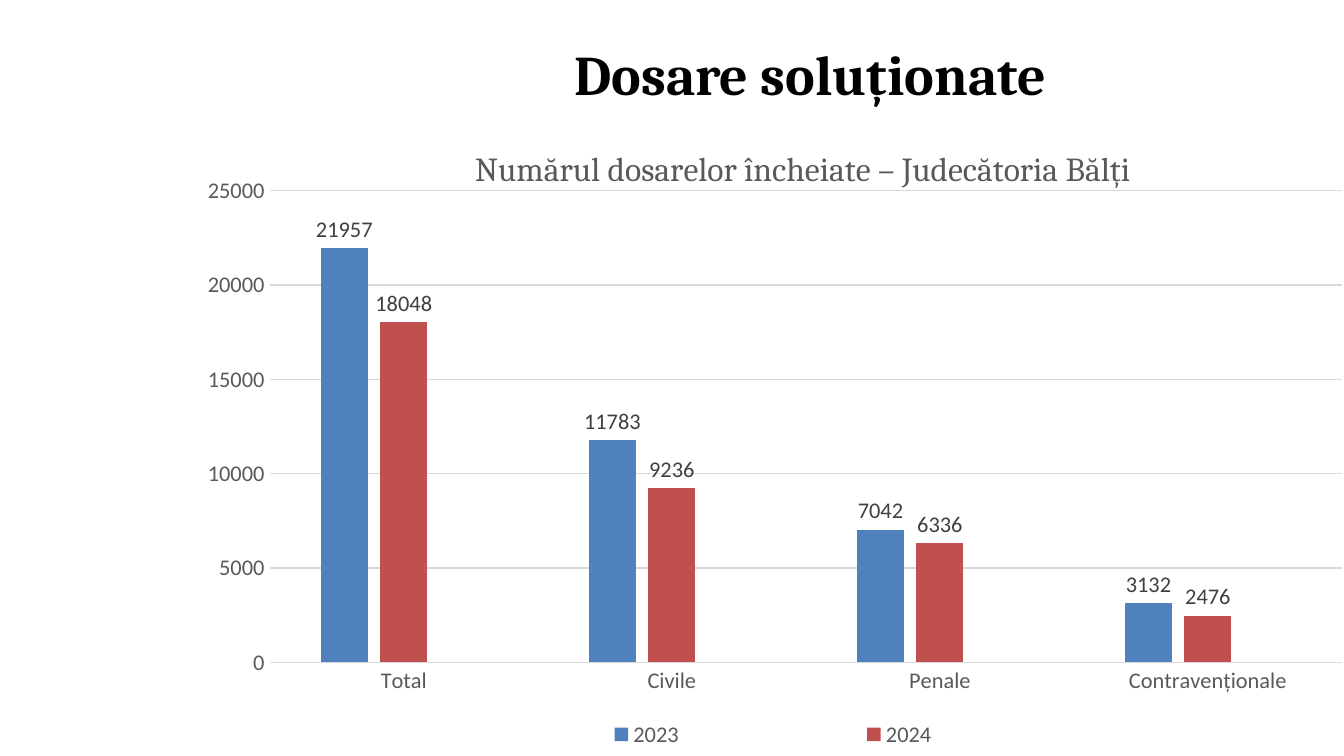
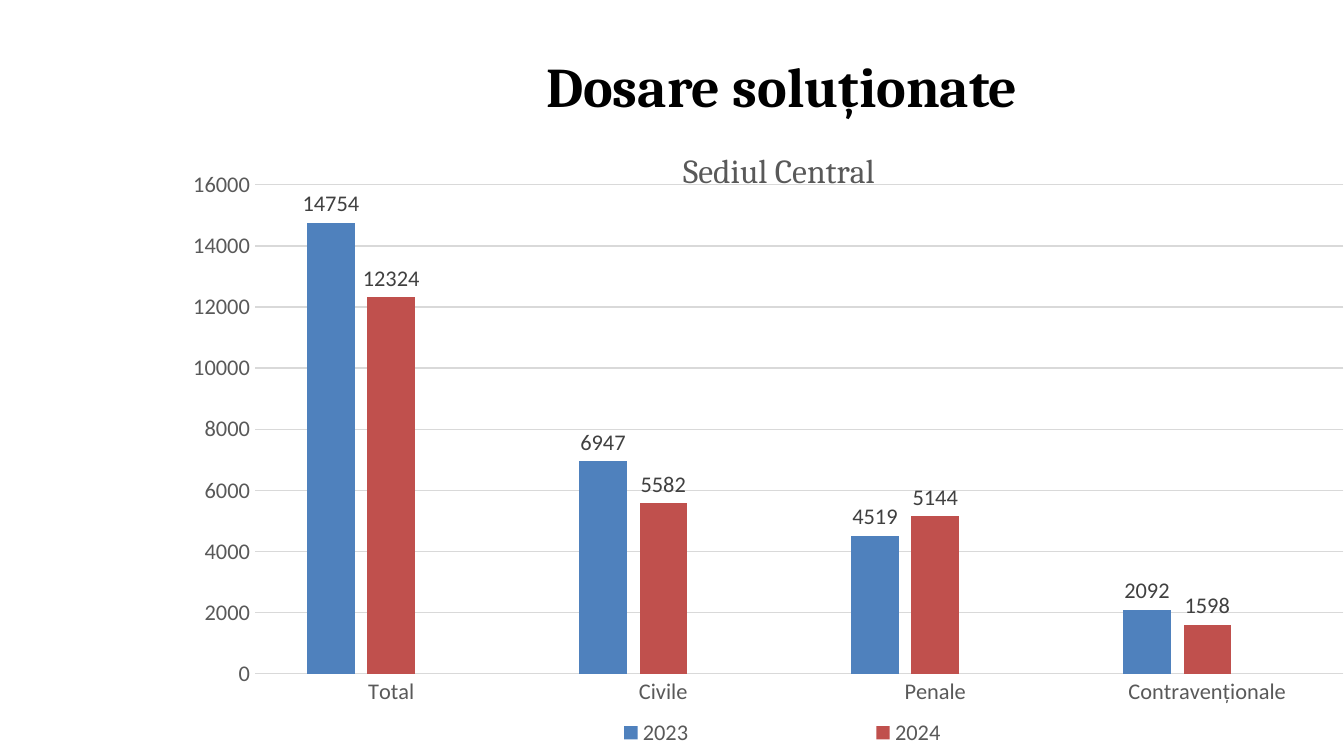
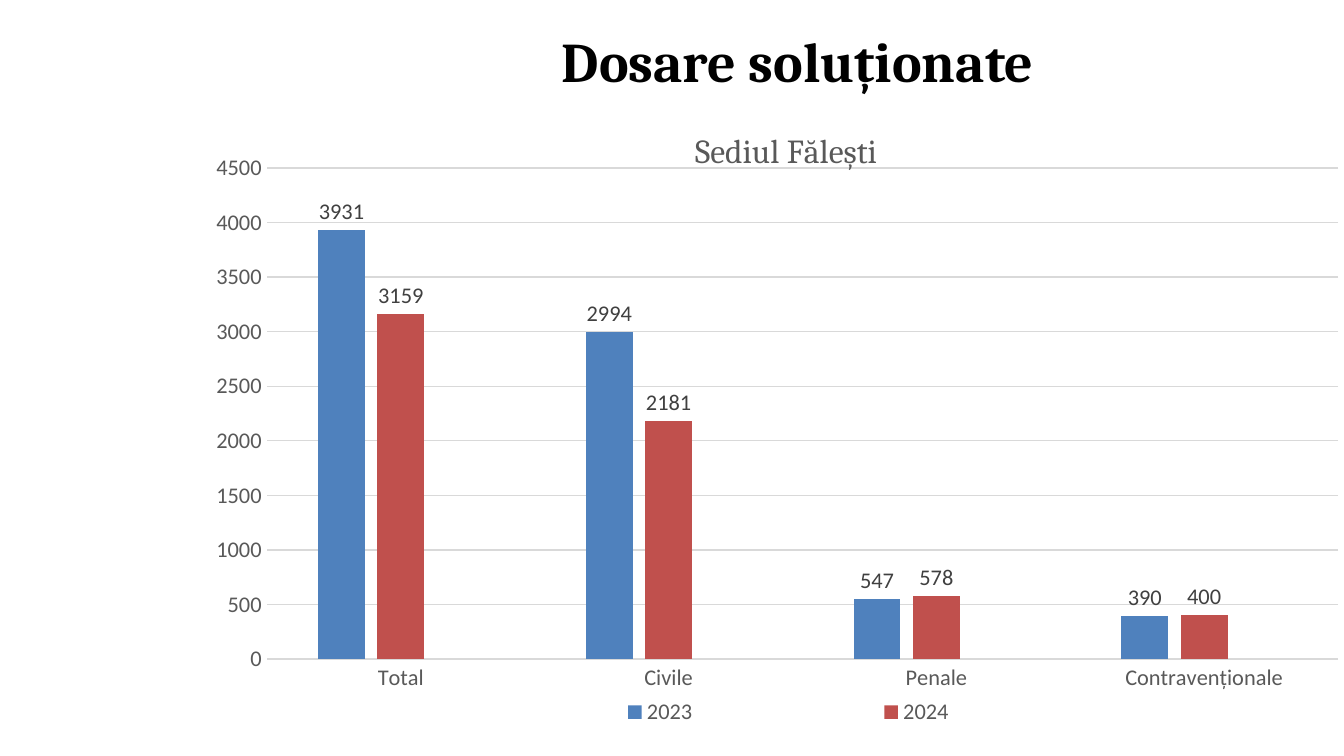
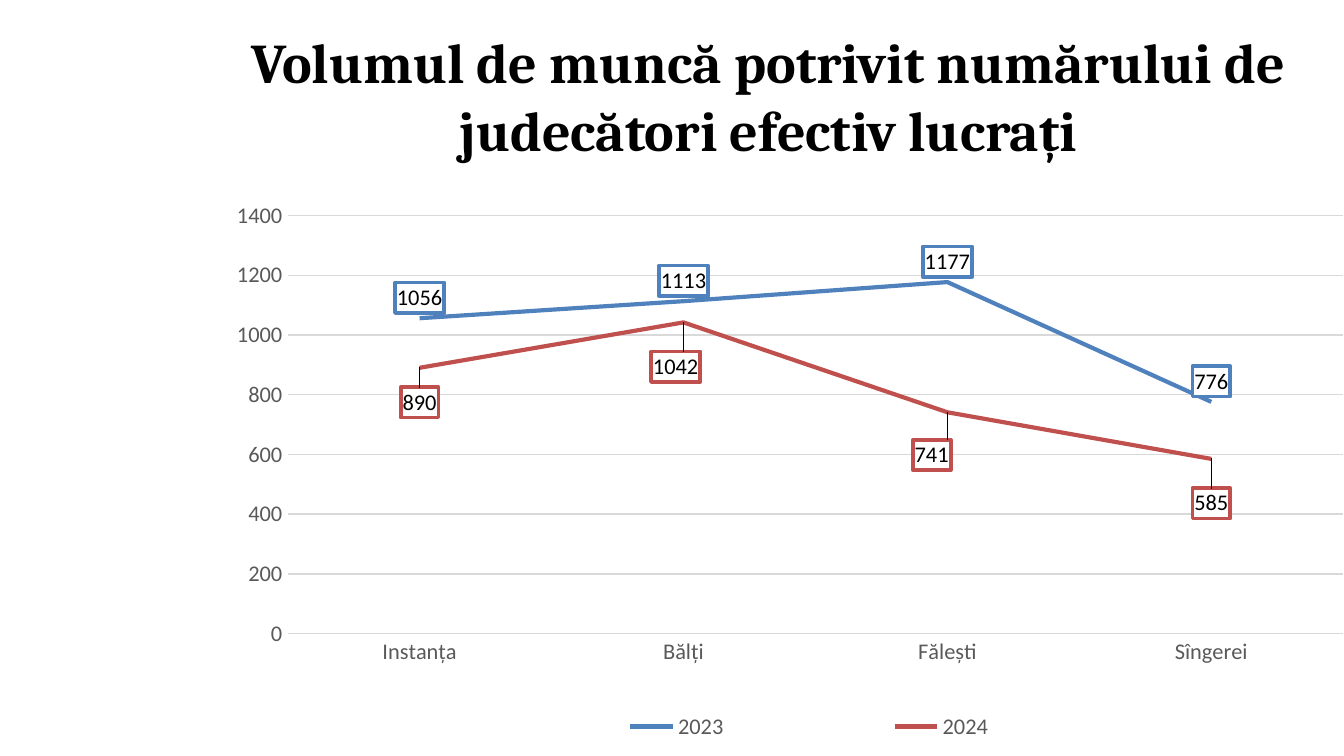
from pptx import Presentation
from pptx.chart.data import CategoryChartData
from pptx.dml.color import RGBColor
from pptx.enum.chart import XL_CHART_TYPE as ChartType
from pptx.enum.chart import XL_LABEL_POSITION as LabelPosition
from pptx.enum.chart import XL_LEGEND_POSITION as LegendPosition
from pptx.enum.chart import XL_TICK_MARK as TickMark
from pptx.enum.text import MSO_ANCHOR as Anchor
from pptx.enum.text import PP_ALIGN as Align
from pptx.oxml import parse_xml
from pptx.oxml.ns import nsdecls
from pptx.util import Cm, Pt

SERIES_COLOURS = {"2023": "4F81BD", "2024": "C0504D", "Series 3": "9BBB59"}
VISIBLE_YEARS = 2
GRID = "D9D9D9"
HEADING = {"name": "Cambria", "size": Pt(30), "bold": True, "color": "000000"}
CHART_TITLE = {"name": "Cambria", "size": Pt(18), "bold": False, "color": "595959"}
AXIS_TEXT = {"name": "Calibri", "size": Pt(12), "bold": False, "color": "595959"}
BAR_LABEL = AXIS_TEXT | {"color": "404040"}
LINE_LABEL = AXIS_TEXT | {"color": "000000"}

CASE_TYPES = ["Total", "Civile", "Penale", "Contravenționale"]
COURTS = ["Instanța", "Bălți", "Fălești", "Sîngerei"]
LEGEND_HEIGHT = 0.06

CASE_SLIDES = [
    {
        "heading_box": (5.41, 0.61, 20.04, 1.55),
        "heading_indent": 0,
        "chart_box": (3.33, 0.43, 22.12, 13.87),
        "title": "Numărul dosarelor încheiate – Judecătoria Bălți",
        "title_at": (0.25, 0.16),
        "plot": (0.08, 0.229, 0.916, 0.643),
        "legend": (0.22, 0.94, 0.58),
        "scale": (25000, 5000),
        "values": [(21957, 11783, 7042, 3132), (18048, 9236, 6336, 2476)],
    },
    {
        "heading_box": (4.39, 0.84, 21.01, 1.55),
        "heading_indent": 0,
        "chart_box": (3.3, 0.33, 22.1, 13.94),
        "title": "Sediul Central",
        "title_at": (0.43, 0.17),
        "plot": (0.069, 0.227, 0.931, 0.663),
        "legend": (0.23, 0.94, 0.58),
        "scale": (16000, 2000),
        "values": [(14754, 6947, 4519, 2092), (12324, 5582, 5144, 1598)],
    },
    {
        "heading_box": (3.89, 0.36, 20.24, 1.55),
        "heading_indent": 2.37,
        "chart_box": (3.3, 0.36, 22.1, 13.94),
        "title": "Sediul Fălești",
        "title_at": (0.44, 0.14),
        "plot": (0.079, 0.202, 0.916, 0.666),
        "legend": (0.23, 0.91, 0.59),
        "scale": (4500, 500),
        "values": [(3931, 2994, 547, 390), (3159, 2181, 578, 400)],
    },
]

WORKLOAD = {
    "heading_box": (4.45, 0.58, 20.14, 2.44),
    "chart_box": (4.14, 3.33, 21.26, 10.95),
    "plot": (0.061, 0.068, 0.939, 0.722),
    "legend": (0.22, 0.92, 0.61),
    "scale": (1400, 200),
    "values": [(1056, 1113, 1177, 776), (890, 1042, 741, 585)],
    "label_shifts": [(0, 0.095), (-0.007, 0.112), (-0.014, 0.109), (0, 0.112)],
}


def colour(hex_text):
    return RGBColor.from_string(hex_text)


def set_values(target, values):
    for name, value in values.items():
        setattr(target, name, value)


def style_font(font, values):
    for name, value in values.items():
        if name == "color":
            font.color.rgb = colour(value)
        else:
            setattr(font, name, value)


def style_line(line, hex_text, width):
    line.color.rgb = colour(hex_text)
    line.width = Pt(width)


def set_layout(parent, index, parts):
    for old in parent.xpath("./c:layout"):
        parent.remove(old)
    inner = "".join(f'<c:{tag} val="{value}"/>' for tag, value in parts)
    parent.insert(index, parse_xml(
        f'<c:layout {nsdecls("c")}><c:manualLayout>{inner}</c:manualLayout></c:layout>'))


def frame_parts(frame):
    edges = [("xMode", "edge"), ("yMode", "edge")]
    return edges + list(zip(("x", "y", "w", "h"), frame))


def add_heading(page, box, text, indent=0):
    shape = page.shapes.add_textbox(*map(Cm, box))
    frame = shape.text_frame
    set_values(frame, {
        "word_wrap": True,
        "vertical_anchor": Anchor.MIDDLE,
        "margin_left": Cm(0.25 + indent),
    })
    para = frame.paragraphs[0]
    para.alignment = Align.CENTER
    span = para.add_run()
    span.text = text
    style_font(span.font, HEADING)


def style_axes(chart, scale):
    category_axis, value_axis = chart.category_axis, chart.value_axis
    for axis in (category_axis, value_axis):
        set_values(axis, {"major_tick_mark": TickMark.NONE, "minor_tick_mark": TickMark.NONE})
        style_font(axis.tick_labels.font, AXIS_TEXT)
    style_line(category_axis.format.line, GRID, 0.75)
    maximum, step = scale
    set_values(value_axis, {
        "minimum_scale": 0,
        "maximum_scale": maximum,
        "major_unit": step,
        "has_major_gridlines": True,
    })
    style_line(value_axis.major_gridlines.format.line, GRID, 0.75)
    value_axis.format.line.fill.background()


def add_legend(chart, frame):
    chart.has_legend = True
    set_values(chart.legend, {"position": LegendPosition.BOTTOM, "include_in_layout": False})
    style_font(chart.legend.font, AXIS_TEXT)
    legend = chart.element.xpath(".//c:legend")[0]
    legend.insert(1, parse_xml(
        f'<c:legendEntry {nsdecls("c")}><c:idx val="{VISIBLE_YEARS}"/>'
        '<c:delete val="1"/></c:legendEntry>'))
    set_layout(legend, 2, frame_parts(frame + (LEGEND_HEIGHT,)))


def add_year_chart(page, kind, categories, facts):
    chart_data = CategoryChartData()
    chart_data.categories = categories
    rows = facts["values"] + [(None,) * len(categories)]
    for name, row in zip(SERIES_COLOURS, rows):
        chart_data.add_series(name, row)
    chart = page.shapes.add_chart(kind, *map(Cm, facts["chart_box"]), chart_data).chart
    style_font(chart.font, AXIS_TEXT | {"size": Pt(10), "color": "000000"})
    chart.has_title = False
    style_axes(chart, facts["scale"])
    add_legend(chart, facts["legend"])
    set_layout(chart.element.xpath(".//c:plotArea")[0], 0,
               [("layoutTarget", "inner")] + frame_parts(facts["plot"]))
    chart.plots[0].vary_by_categories = False
    return chart


def show_values(series, position, font_values):
    labels = series.data_labels
    set_values(labels, {"show_value": True, "position": position})
    style_font(labels.font, font_values)


def add_chart_title(chart, text, corner):
    chart.has_title = True
    para = chart.chart_title.text_frame.paragraphs[0]
    span = para.add_run()
    span.text = text
    style_font(span.font, CHART_TITLE)
    set_layout(chart.element.xpath("./c:chart/c:title")[0], 1, frame_parts(corner))


def add_case_slide(page, facts):
    add_heading(page, facts["heading_box"], "Dosare soluționate ", facts["heading_indent"])
    chart = add_year_chart(page, ChartType.COLUMN_CLUSTERED, CASE_TYPES, facts)
    add_chart_title(chart, facts["title"], facts["title_at"])
    plot = chart.plots[0]
    set_values(plot, {"gap_width": 219, "overlap": -27})
    for series in plot.series:
        series.format.fill.solid()
        series.format.fill.fore_color.rgb = colour(SERIES_COLOURS[series.name])
        series.invert_if_negative = False
    for series in list(plot.series)[:VISIBLE_YEARS]:
        show_values(series, LabelPosition.OUTSIDE_END, BAR_LABEL)


def shift_labels(chart, series, shifts):
    for index in range(len(shifts)):
        label = series.points[index].data_label
        style_font(label.font, LINE_LABEL)
        label.position = LabelPosition.ABOVE
    for label, shift in zip(chart.element.xpath(".//c:dLbl"), shifts):
        set_layout(label, 1, zip(("x", "y"), shift))


def frame_labels(chart, number, hex_text):
    for text_style in chart.element.xpath(f".//c:ser[{number}]/c:dLbls//c:txPr"):
        text_style.addprevious(parse_xml(
            f'<c:spPr {nsdecls("c", "a")}>'
            '<a:solidFill><a:srgbClr val="FFFFFF"/></a:solidFill>'
            f'<a:ln w="{Pt(2)}"><a:solidFill><a:srgbClr val="{hex_text}"/></a:solidFill></a:ln>'
            '</c:spPr>'))


def add_workload_slide(page, facts):
    add_heading(page, facts["heading_box"],
                "Volumul de muncă potrivit numărului de judecători efectiv lucrați")
    chart = add_year_chart(page, ChartType.LINE, COURTS, facts)
    all_series = list(chart.plots[0].series)
    for series in all_series:
        series.smooth = False
        style_line(series.format.line, SERIES_COLOURS[series.name], 2.25)
    years = all_series[:VISIBLE_YEARS]
    for series in years:
        show_values(series, LabelPosition.ABOVE, LINE_LABEL)
    shift_labels(chart, years[-1], facts["label_shifts"])
    for number, series in enumerate(years, 1):
        frame_labels(chart, number, SERIES_COLOURS[series.name])


def main():
    deck = Presentation()
    set_values(deck, {"slide_width": Cm(25.4), "slide_height": Cm(14.29)})
    blank = deck.slide_layouts[6]
    for facts in CASE_SLIDES:
        add_case_slide(deck.slides.add_slide(blank), facts)
    add_workload_slide(deck.slides.add_slide(blank), WORKLOAD)
    deck.save("out.pptx")


if __name__ == "__main__":
    main()
